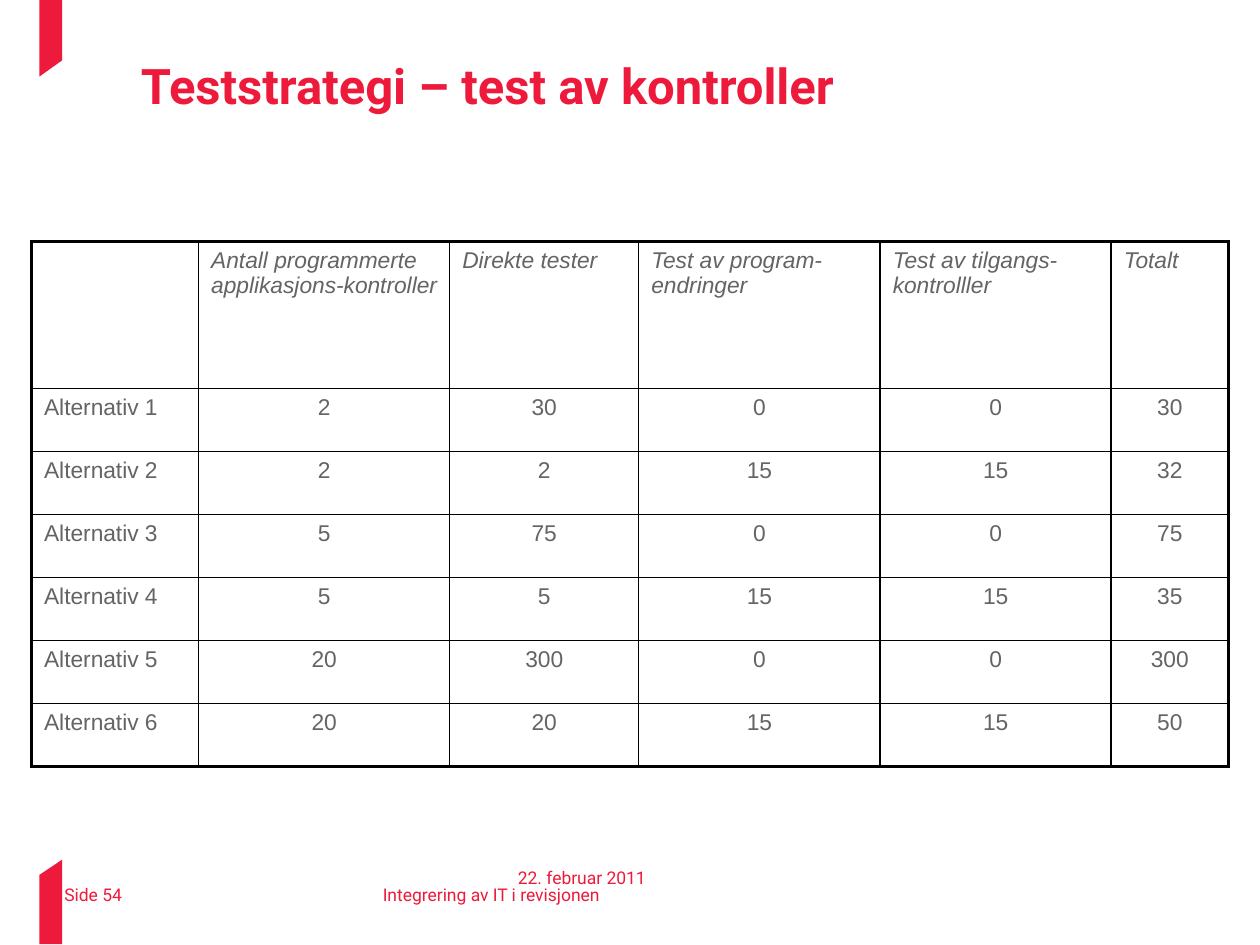
from dataclasses import dataclass

from lxml.etree import SubElement
from pptx import Presentation
from pptx.dml.color import RGBColor
from pptx.enum.text import MSO_ANCHOR as Anchor, PP_ALIGN as Align
from pptx.oxml.ns import qn
from pptx.util import Pt

RED = RGBColor(0xED, 0x1A, 0x3B)
GREY = RGBColor(0x64, 0x64, 0x64)
BLACK = RGBColor(0, 0, 0)
WHITE = RGBColor(0xFF, 0xFF, 0xFF)
INNER_LINE, OUTER_LINE = 1, 2.25


@dataclass(frozen=True)
class FooterText:
    text: str
    left: float
    top: float
    width: float
    height: float


@dataclass(frozen=True)
class Ribbon:
    points: tuple[tuple[float, float], ...]


@dataclass(frozen=True)
class Alternative:
    name: str
    controls: int
    direct_tests: int
    change_tests: int
    access_tests: int

    @property
    def total(self) -> int:
        return self.direct_tests + self.change_tests + self.access_tests

    @property
    def row(self) -> list[str]:
        return [self.name, *map(str, (self.controls, self.direct_tests,
                                      self.change_tests, self.access_tests, self.total))]


RIBBONS = (
    Ribbon(((35.5, 34.5), (35.5, 0), (22.5, 0), (22.5, 43.75))),
    Ribbon(((22.5, 500), (22.5, 539.5), (35.5, 539.5), (35.5, 491.25))),
)
FOOTERS = (
    FooterText("22. februar 2011", 296, 495.25, 128, 17),
    FooterText("Integrering av IT i revisjonen", 218.75, 505, 327, 14.5),
    FooterText("Side 54", 36.75, 505, 62, 14.5),
)
HEADINGS = ["", "Antall programmerte applikasjons-kontroller", "Direkte tester",
            "Test av program-endringer", "Test av tilgangs-kontrolller", "Totalt"]
ALTERNATIVES = (
    Alternative("Alternativ 1", 2, 30, 0, 0),
    Alternative("Alternativ 2", 2, 2, 15, 15),
    Alternative("Alternativ 3", 5, 75, 0, 0),
    Alternative("Alternativ 4", 5, 5, 15, 15),
    Alternative("Alternativ 5", 20, 300, 0, 0),
    Alternative("Alternativ 6", 20, 20, 15, 15),
)
COLUMN_WIDTHS = (95.5, 143.5, 108, 138, 132, 67)
HEADING_HEIGHT, ROW_HEIGHT = 84, 36


def write(frame, text: str, *, size: float, font: str, color: RGBColor,
          bold: bool = False, italic: bool = False, align=Align.LEFT,
          spacing: float = 1.0) -> None:
    paragraph = frame.paragraphs[0]
    paragraph.alignment = align
    paragraph.line_spacing = spacing
    paragraph.font.size = Pt(size)
    run = paragraph.add_run()
    run.text = text
    run.font.name = font
    run.font.size = Pt(size)
    run.font.bold = bold
    run.font.italic = italic
    run.font.color.rgb = color


def clear_margins(frame) -> None:
    frame.margin_left = frame.margin_right = frame.margin_top = frame.margin_bottom = 0
    frame.vertical_anchor = Anchor.TOP
    frame.word_wrap = True


def draw_ribbon(slide, ribbon: Ribbon) -> None:
    start, *others = [(Pt(x), Pt(y)) for x, y in ribbon.points]
    builder = slide.shapes.build_freeform(*start)
    builder.add_line_segments(others, close=True)
    outline = builder.convert_to_shape()
    outline.shadow.inherit = False
    outline.fill.solid()
    outline.fill.fore_color.rgb = RED
    outline.line.fill.background()


def draw_footer(slide, footer: FooterText) -> None:
    frame = slide.shapes.add_textbox(Pt(footer.left), Pt(footer.top),
                                     Pt(footer.width), Pt(footer.height)).text_frame
    clear_margins(frame)
    write(frame, footer.text, size=10, font="Roboto", color=RED)


def draw_title(slide, text: str) -> None:
    title = slide.shapes.title
    title.left, title.top, title.width, title.height = Pt(80.5), Pt(30.25), Pt(576), Pt(28)
    clear_margins(title.text_frame)
    write(title.text_frame, text, size=28, font="Roboto", color=RED, bold=True, spacing=1.05)


def set_borders(cell, **widths: float) -> None:
    properties = cell._tc.get_or_add_tcPr()
    for side, width in widths.items():
        line = SubElement(properties, qn(f"a:ln{side}"), w=str(Pt(width)))
        fill = SubElement(line, qn("a:solidFill"))
        SubElement(fill, qn("a:srgbClr"), val=str(BLACK))


def draw_table(slide, rows: list[list[str]]) -> None:
    last_row, last_column = len(rows) - 1, len(COLUMN_WIDTHS) - 1
    heights = [HEADING_HEIGHT] + [ROW_HEIGHT] * last_row
    table = slide.shapes.add_table(len(rows), len(COLUMN_WIDTHS), Pt(18), Pt(138),
                                   Pt(sum(COLUMN_WIDTHS)), Pt(sum(heights))).table
    table.first_row = table.horz_banding = False
    for column, width in zip(table.columns, COLUMN_WIDTHS):
        column.width = Pt(width)
    for r, (values, height) in enumerate(zip(rows, heights)):
        table.rows[r].height = Pt(height)
        for c, value in enumerate(values):
            cell = table.cell(r, c)
            edges = {"L": c == 0, "R": c == last_column, "T": r == 0, "B": r == last_row}
            set_borders(cell, **{side: OUTER_LINE if outer else INNER_LINE
                                 for side, outer in edges.items()})
            cell.fill.solid()
            cell.fill.fore_color.rgb = WHITE
            if value:
                write(cell.text_frame, value, size=13, font="Arial", color=GREY,
                      italic=r == 0, align=Align.CENTER if r and c else Align.LEFT)


def main() -> None:
    presentation = Presentation()
    presentation.slide_width, presentation.slide_height = Pt(720), Pt(540)
    slide = presentation.slides.add_slide(presentation.slide_layouts[5])
    for ribbon in RIBBONS:
        draw_ribbon(slide, ribbon)
    for footer in FOOTERS:
        draw_footer(slide, footer)
    draw_title(slide, "Teststrategi – test av kontroller")
    draw_table(slide, [HEADINGS] + [alternative.row for alternative in ALTERNATIVES])
    presentation.save("out.pptx")


if __name__ == "__main__":
    main()
